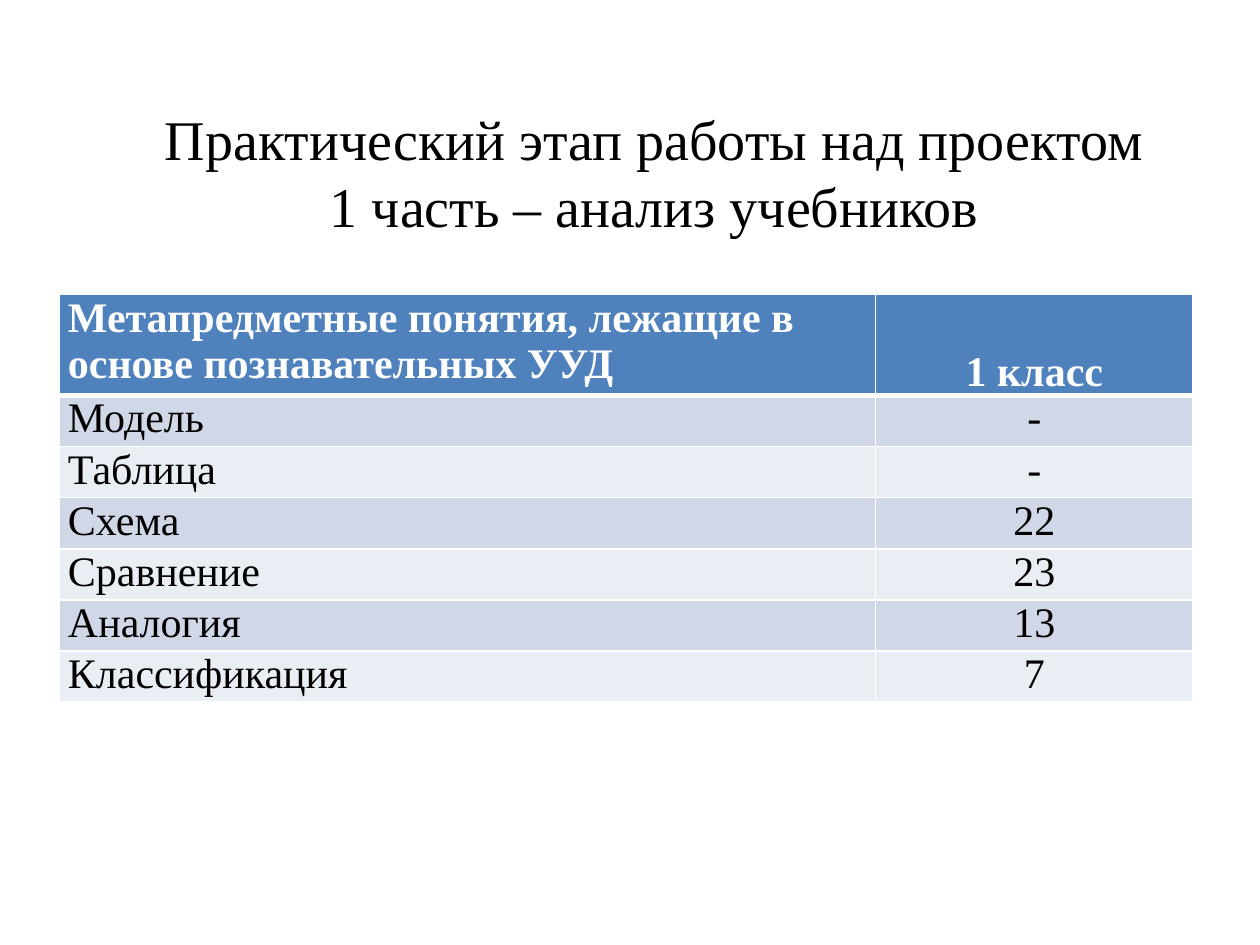
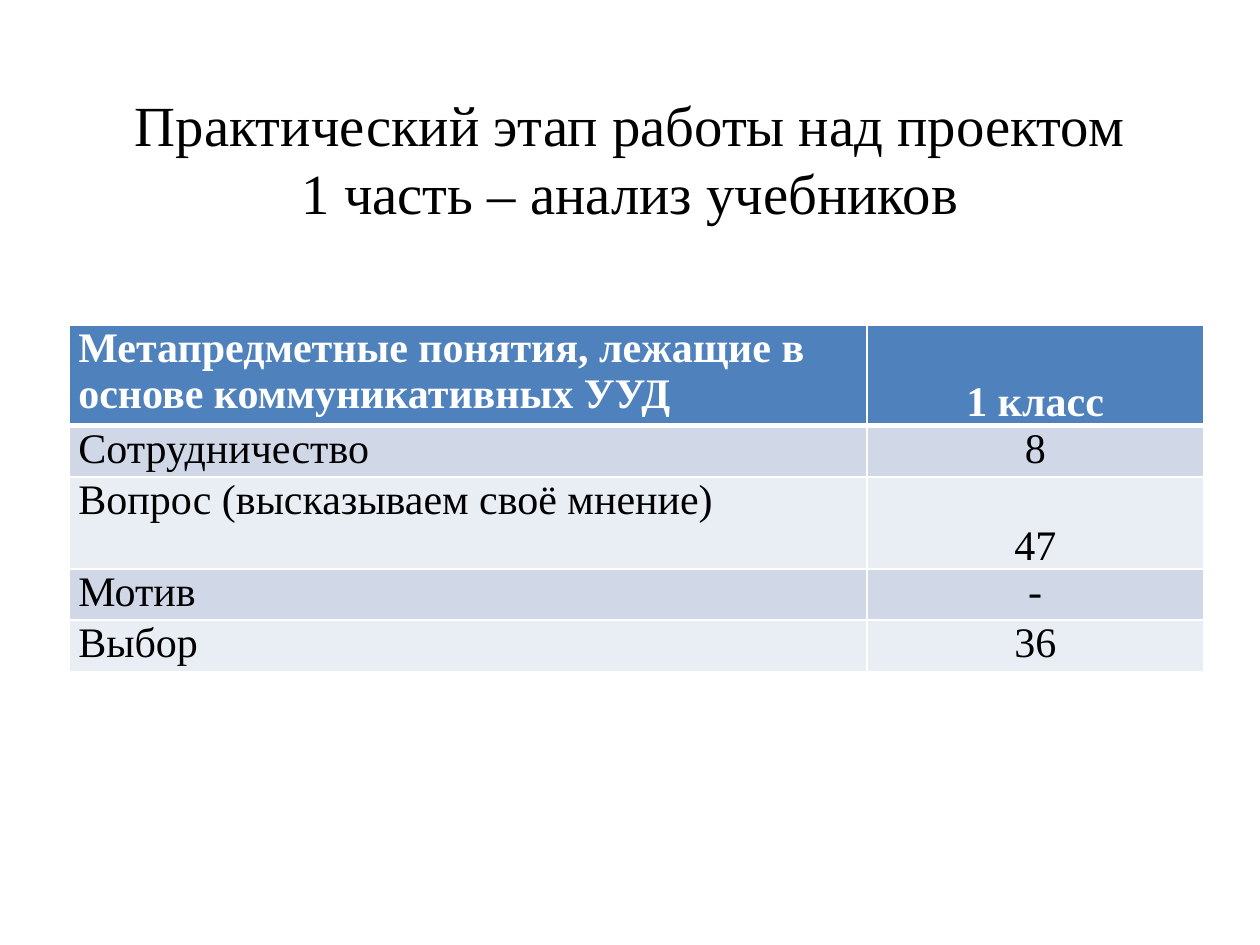
from lxml import etree
from pptx import Presentation
from pptx import util as u
from pptx.dml import color
from pptx.enum import text
from pptx.oxml import ns

FONT = "Times New Roman"
WHITE, BLACK, HEADER_BLUE = "FFFFFF", "000000", "4F81BD"
BANDS = ["D0D8E8", "E9EDF4"]
TITLE_LINES = ["Практический этап работы над проектом", "1 часть – анализ учебников"]
SINGLE_ROW, DOUBLE_ROW = 1.03, 1.86


def rgb(hex_string):
    return color.RGBColor.from_string(hex_string)


def add_span(para, words, size, hex_color, bold=False):
    span = para.add_run()
    span.text = words
    span.font.name = FONT
    span.font.size = u.Pt(size)
    span.font.bold = bold
    span.font.color.rgb = rgb(hex_color)


# Title boxes (left, top, width), tables (left, top, columns) and rows; lengths in cm
pages = [
    {
        "title": (2.97, 1.98, 20.45), "title_size": 32,
        "table": (1.19, 5.94), "columns": (16.46, 6.4),
        "rows": [
            ("Метапредметные понятия, лежащие в основе познавательных УУД", "1 класс"),
            ("Модель", "-"),
            ("Таблица", "-"),
            ("Схема", "22"),
            ("Сравнение", "23"),
            ("Аналогия", "13"),
            ("Классификация", "7"),
        ],
        "double_rows": [0],
    },
    {
        "title": (1.27, 1.68, 22.86), "title_size": 32.4,
        "table": (1.4, 6.55), "columns": (16.08, 6.78),
        "rows": [
            ("Метапредметные понятия, лежащие в основе коммуникативных УУД", "1 класс"),
            ("Сотрудничество", "8"),
            ("Вопрос (высказываем своё мнение)", "47"),
            ("Мотив", "-"),
            ("Выбор", "36"),
        ],
        "double_rows": [0, 2],
    },
]

deck = Presentation()
deck.slide_width, deck.slide_height = u.Cm(25.4), u.Cm(19.05)

for content in pages:
    page = deck.slides.add_slide(deck.slide_layouts[6])

    # Title
    left, top, width = content["title"]
    box = page.shapes.add_textbox(u.Cm(left), u.Cm(top), u.Cm(width), u.Cm(3))
    box.text_frame.word_wrap = True
    para = box.text_frame.paragraphs[0]
    para.alignment = text.PP_ALIGN.CENTER
    for number, line in enumerate(TITLE_LINES):
        if number:
            para.add_line_break()
        add_span(para, line, content["title_size"], BLACK)

    # Table frame
    rows, columns = content["rows"], content["columns"]
    heights = [DOUBLE_ROW if number in content["double_rows"] else SINGLE_ROW
               for number in range(len(rows))]
    left, top = content["table"]
    table = page.shapes.add_table(len(rows), len(columns), u.Cm(left), u.Cm(top),
                                  u.Cm(sum(columns)), u.Cm(sum(heights))).table
    table.horz_banding = False
    for column, width in zip(table.columns, columns):
        column.width = u.Cm(width)

    # Table cells
    for row_number, (row, height) in enumerate(zip(rows, heights)):
        table.rows[row_number].height = u.Cm(height)
        is_header = row_number == 0
        for column_number, words in enumerate(row):
            cell = table.cell(row_number, column_number)
            cell.margin_left = cell.margin_right = u.Cm(0.18)
            cell.margin_top = cell.margin_bottom = 0
            cell.fill.solid()
            cell.fill.fore_color.rgb = rgb(HEADER_BLUE if is_header else BANDS[(row_number - 1) % 2])
            para = cell.text_frame.paragraphs[0]
            if column_number == 1:
                para.alignment = text.PP_ALIGN.CENTER
                if height == DOUBLE_ROW:
                    cell.vertical_anchor = text.MSO_ANCHOR.BOTTOM
            add_span(para, words, 24, WHITE if is_header else BLACK, is_header)

            # White borders, thicker under the header
            properties = cell._tc.get_or_add_tcPr()
            for position, side in enumerate(["lnL", "lnR", "lnT", "lnB"]):
                thick = (side, row_number) in [("lnB", 0), ("lnT", 1)]
                border = etree.Element(ns.qn("a:" + side), w=str(u.Pt(3 if thick else 1)))
                paint = etree.SubElement(border, ns.qn("a:solidFill"))
                etree.SubElement(paint, ns.qn("a:srgbClr"), val=WHITE)
                properties.insert(position, border)

deck.save("out.pptx")
